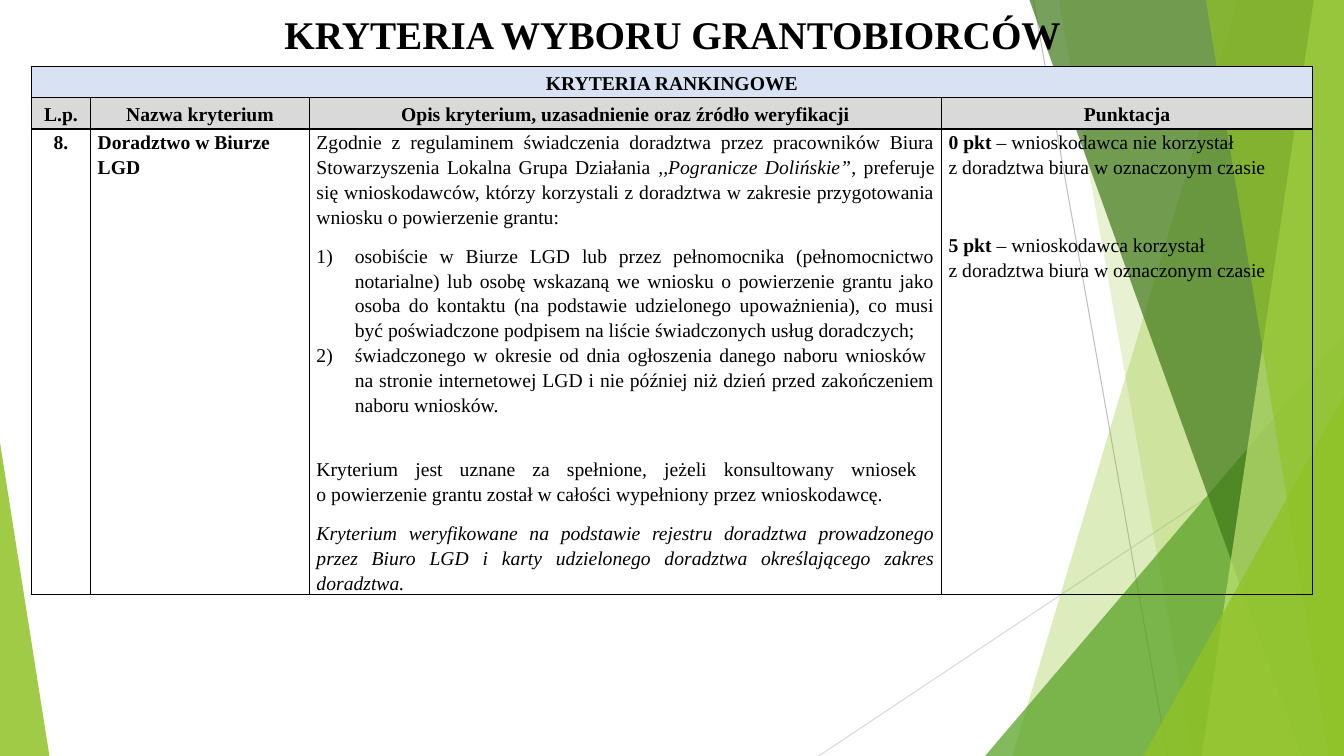
from dataclasses import dataclass

from pptx import Presentation
from pptx.dml.color import RGBColor
from pptx.enum.shapes import MSO_CONNECTOR, MSO_SHAPE
from pptx.enum.text import MSO_ANCHOR, MSO_AUTO_SIZE, PP_ALIGN
from pptx.oxml.ns import qn
from pptx.oxml.xmlchemy import OxmlElement
from pptx.util import Inches, Pt

CENTER, LEFT, JUSTIFY = PP_ALIGN.CENTER, PP_ALIGN.LEFT, PP_ALIGN.JUSTIFY
MIDDLE, TOP = MSO_ANCHOR.MIDDLE, MSO_ANCHOR.TOP
TRIANGLE = MSO_SHAPE.ISOSCELES_TRIANGLE
STRAIGHT = MSO_CONNECTOR.STRAIGHT
NO_AUTOFIT = MSO_AUTO_SIZE.NONE
TITLE_ONLY = 5
WIDTH, HEIGHT = 13.33, 7.5


@dataclass(frozen=True)
class Theme:
    """Colours, font and type sizes of the slide."""
    font: str = "Times New Roman"
    title_size: int = 28
    body_size: int = 14
    ink: str = "000000"
    band: str = "D9E2F3"
    header: str = "D9D9D9"
    ray_dark: str = "BFBFBF"
    ray_light: str = "D9D9D9"
    lime: str = "90C226"
    green: str = "54A021"
    forest: str = "3F7819"
    pale: str = "C0E474"


THEME = Theme()
COLUMNS = (0.59, 2.17, 6.27, 3.68)
ROWS = (0.31, 0.31, 4.61)
HEADINGS = ("L.p.", "Nazwa kryterium",
            "Opis kryterium, uzasadnienie oraz źródło weryfikacji", "Punktacja")
BOLD, ITALIC = {"bold": True}, {"italic": True}
GAP = {"space_before": Pt(28)}
TIGHT = {"space_after": Pt(0)}

DESCRIPTION = [
    ([("Zgodnie z regulaminem świadczenia doradztwa przez pracowników Biura "
       "Stowarzyszenia Lokalna Grupa Działania ", {}),
      (",,Pogranicze Dolińskie”", ITALIC),
      (", preferuje się wnioskodawców, którzy korzystali z doradztwa w zakresie "
       "przygotowania wniosku o powierzenie grantu:", {})], {}, False),
    ([("osobiście w Biurze LGD lub przez pełnomocnika (pełnomocnictwo notarialne) lub "
       "osobę wskazaną we wniosku o powierzenie grantu jako osoba do kontaktu "
       "(na podstawie udzielonego upoważnienia), co musi być poświadczone podpisem "
       "na liście świadczonych usług doradczych;", {})], TIGHT, True),
    ([("świadczonego w okresie od dnia ogłoszenia danego naboru wniosków \n"
       "na stronie internetowej LGD i nie później niż dzień przed zakończeniem "
       "naboru wniosków.", {})], TIGHT, True),
    ([("Kryterium jest uznane za spełnione, jeżeli konsultowany wniosek \n"
       "o powierzenie grantu został w całości wypełniony przez wnioskodawcę.", {})],
     GAP, False),
    ([("Kryterium weryfikowane na podstawie rejestru doradztwa prowadzonego przez "
       "Biuro LGD i karty udzielonego doradztwa określającego zakres doradztwa.",
       ITALIC)], {}, False),
]
SCORING = [
    ([("0 pkt", BOLD), (" – wnioskodawca nie korzystał \n"
                        "z doradztwa biura w oznaczonym czasie", {})], {}, False),
    ([("5 pkt", BOLD), (" – wnioskodawca korzystał \n"
                        "z doradztwa biura w oznaczonym czasie", {})], GAP, False),
]


def apply(target, formats):
    """Set every attribute in formats on target."""
    for name, value in formats.items():
        setattr(target, name, value)


def add_child(parent, tag, **attributes):
    """Append an XML element with attributes and return it."""
    child = OxmlElement(tag)
    for name, value in attributes.items():
        child.set(name, value)
    parent.append(child)
    return child


def write_runs(paragraph, runs, size=THEME.body_size):
    """Write formatted runs, turning newlines into line breaks."""
    for text, style in runs:
        for index, line in enumerate(text.split("\n")):
            if index:
                paragraph.add_line_break()
            run = paragraph.add_run()
            run.text = line
            apply(run.font, {"name": THEME.font, "size": Pt(size), "bold": False,
                             "italic": False, **style})
            run.font.color.rgb = RGBColor.from_string(THEME.ink)


def number_paragraph(paragraph):
    """Give a paragraph a hanging automatic number."""
    properties = paragraph._p.get_or_add_pPr()
    properties.set("marL", str(Inches(0.38)))
    properties.set("indent", str(-Inches(0.38)))
    add_child(properties, "a:buFont", typeface=THEME.font)
    add_child(properties, "a:buAutoNum", type="arabicParenR")


def add_borders(cell):
    """Draw thin lines on all four sides of a cell."""
    properties = cell._tc.get_or_add_tcPr()
    for index, side in enumerate(("a:lnL", "a:lnR", "a:lnT", "a:lnB")):
        line = OxmlElement(side)
        line.set("w", str(Pt(1)))
        add_child(add_child(line, "a:solidFill"), "a:srgbClr", val=THEME.ink)
        properties.insert(index, line)


def fill_cell(cell, paragraphs, align, color=None):
    """Write a table cell's paragraphs and set its look."""
    side = Inches(0.06 if color else 0.07)
    apply(cell, {"margin_left": side, "margin_right": side, "margin_top": 0,
                 "margin_bottom": 0, "vertical_anchor": MIDDLE if color else TOP})
    for index, (runs, spacing, numbered) in enumerate(paragraphs):
        frame = cell.text_frame
        paragraph = frame.add_paragraph() if index else frame.paragraphs[0]
        apply(paragraph, {"alignment": align, "line_spacing": 1.15,
                          "space_after": Pt(10), **spacing})
        if numbered:
            number_paragraph(paragraph)
        write_runs(paragraph, runs)
    if color:
        cell.fill.solid()
        cell.fill.fore_color.rgb = RGBColor.from_string(color)
    else:
        cell.fill.background()
    add_borders(cell)


def add_ray(slide, start, end, color):
    """Draw a thin line of the backdrop."""
    ray = slide.shapes.add_connector(STRAIGHT, *map(Inches, start + end))
    ray.line.width = Pt(0.75)
    ray.line.color.rgb = RGBColor.from_string(color)
    add_child(ray.element.spPr, "a:effectLst")


def paint_facet(facet, color, opacity):
    """Give a backdrop facet a translucent fill without outline."""
    facet.shadow.inherit = False
    facet.line.fill.background()
    facet.fill.solid()
    facet.fill.fore_color.rgb = RGBColor.from_string(color)
    tint = next(facet.element.spPr.iter(qn("a:srgbClr")))
    add_child(tint, "a:alpha", val=str(opacity * 1000))


def add_band(slide, top_x, bottom_x, color, opacity):
    """Draw a facet between a slanted edge and the slide's right side."""
    corners = [(Inches(x), Inches(y)) for x, y in
               ((top_x, 0), (WIDTH, 0), (WIDTH, HEIGHT), (bottom_x, HEIGHT))]
    builder = slide.shapes.build_freeform(*corners[0], scale=1.0)
    builder.add_line_segments(corners[1:], close=True)
    paint_facet(builder.convert_to_shape(), color, opacity)


def add_wedge(slide, left, top, width, apex, color, opacity):
    """Draw a triangular facet standing on the slide's bottom."""
    box = map(Inches, (left, top, width, HEIGHT - top))
    wedge = slide.shapes.add_shape(TRIANGLE, *box)
    wedge.adjustments[0] = apex
    paint_facet(wedge, color, opacity)


def add_backdrop(slide):
    """Draw the rays and green facets from back to front."""
    add_ray(slide, (10.25, 0), (11.58, HEIGHT), THEME.ray_dark)
    add_ray(slide, (WIDTH, 4.03), (8.12, HEIGHT), THEME.ray_light)
    add_band(slide, 12.28, 10.04, THEME.lime, 30)
    add_band(slide, 10.5, 11.83, THEME.lime, 20)
    add_wedge(slide, 9.77, 3.33, 3.56, 1, THEME.green, 72)
    add_band(slide, 10.21, 12.91, THEME.forest, 70)
    add_band(slide, 13.03, 11.92, THEME.pale, 70)
    add_band(slide, 11.96, 13.18, THEME.lime, 65)
    add_wedge(slide, 11.34, 3.93, 1.99, 1, THEME.lime, 80)
    add_wedge(slide, 0, 4.39, 0.49, 0, THEME.lime, 85)


def add_title(slide, text):
    """Place the title above the backdrop and write it."""
    title = slide.shapes.title
    apply(title, {"left": Inches(0.92), "top": Inches(0.08),
                  "width": Inches(11.5), "height": Inches(0.57)})
    apply(title.text_frame, {"vertical_anchor": MIDDLE, "word_wrap": True,
                             "auto_size": NO_AUTOFIT})
    heading = title.text_frame.paragraphs[0]
    apply(heading, {"alignment": CENTER, "line_spacing": 0.9})
    write_runs(heading, [(text, BOLD)], THEME.title_size)
    title.element.getparent().append(title.element)


def add_criteria(slide):
    """Build the ranking criteria table."""
    box = map(Inches, (0.31, 0.66, sum(COLUMNS), sum(ROWS)))
    criteria = slide.shapes.add_table(len(ROWS), len(COLUMNS), *box).table
    apply(criteria, {"first_row": False, "horz_banding": False})
    for column, width in zip(criteria.columns, COLUMNS):
        column.width = Inches(width)
    for row, height in zip(criteria.rows, ROWS):
        row.height = Inches(height)
    criteria.cell(0, 0).merge(criteria.cell(0, len(COLUMNS) - 1))
    band = ("KRYTERIA RANKINGOWE", "", "", "")
    for row, (labels, color) in enumerate(((band, THEME.band), (HEADINGS, THEME.header))):
        for column, label in enumerate(labels):
            paragraphs = [([(label, BOLD)], {}, False)] if label else []
            fill_cell(criteria.cell(row, column), paragraphs, CENTER, color)
    criterion = (([([("8.", BOLD)], {}, False)], CENTER),
                 ([([("Doradztwo w Biurze LGD", BOLD)], {}, False)], LEFT),
                 (DESCRIPTION, JUSTIFY), (SCORING, LEFT))
    for column, (paragraphs, align) in enumerate(criterion):
        fill_cell(criteria.cell(2, column), paragraphs, align)


def main():
    """Build and save the slide."""
    deck = Presentation()
    apply(deck, {"slide_width": Inches(WIDTH), "slide_height": Inches(HEIGHT)})
    slide = deck.slides.add_slide(deck.slide_layouts[TITLE_ONLY])
    add_backdrop(slide)
    add_title(slide, "KRYTERIA WYBORU GRANTOBIORCÓW")
    add_criteria(slide)
    deck.save("out.pptx")


if __name__ == "__main__":
    main()
